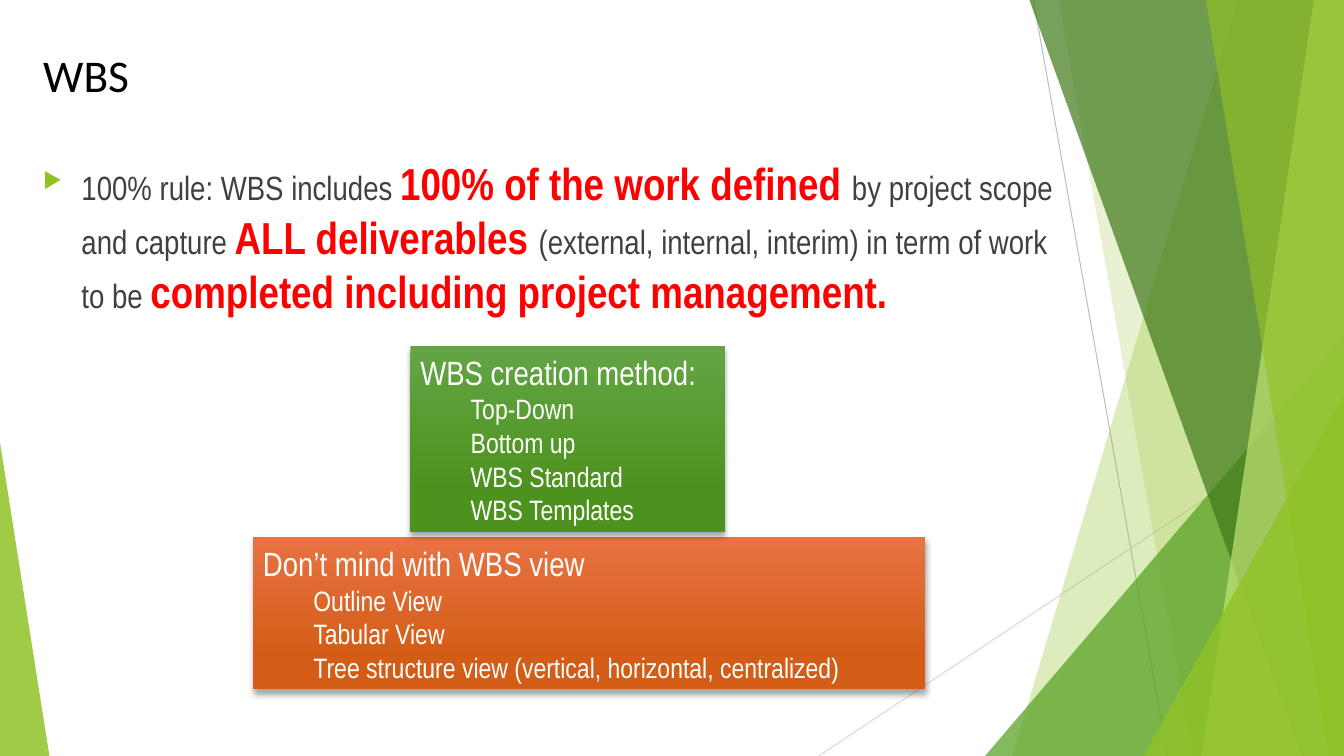
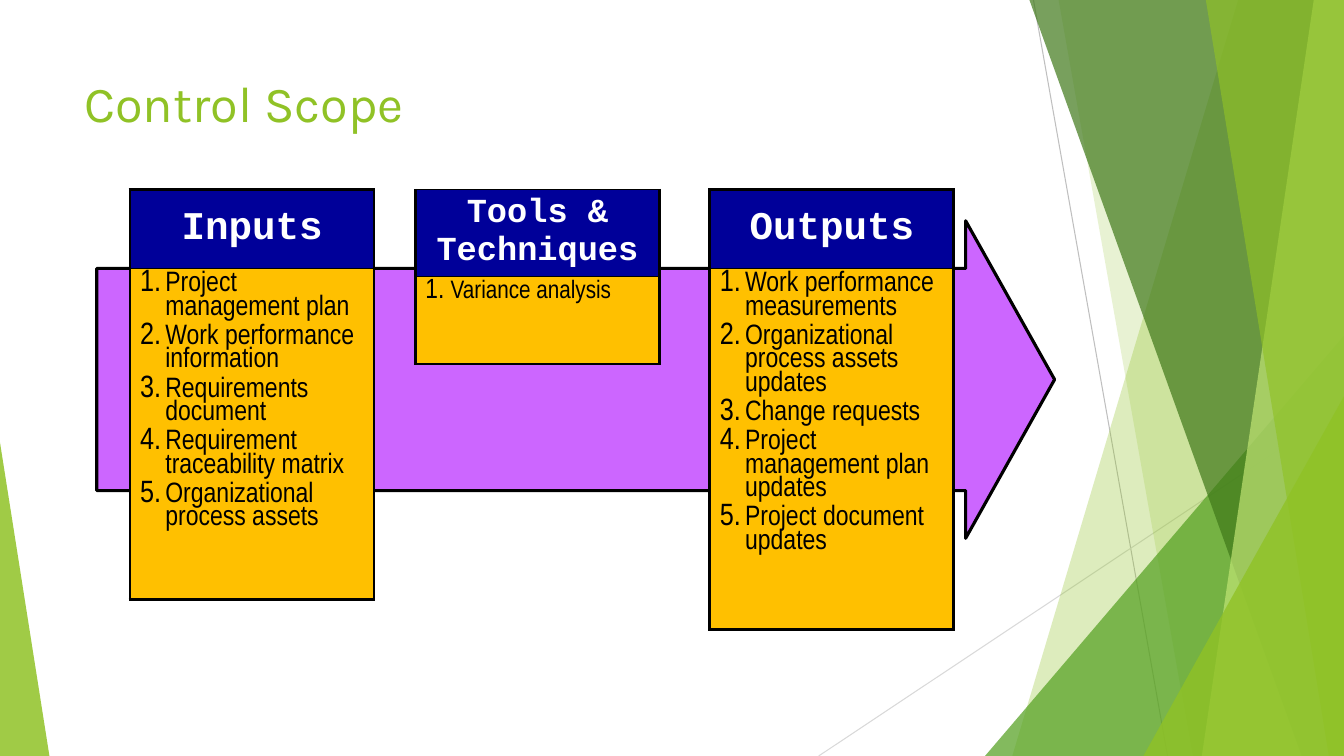
from lxml import etree
from pptx import Presentation
from pptx.dml.color import RGBColor
from pptx.enum.shapes import MSO_CONNECTOR, MSO_SHAPE
from pptx.enum.text import MSO_ANCHOR, PP_ALIGN
from pptx.oxml.ns import qn
from pptx.util import Inches, Pt

STRAIGHT = MSO_CONNECTOR.STRAIGHT
RECTANGLE = MSO_SHAPE.RECTANGLE
TRIANGLE = MSO_SHAPE.ISOSCELES_TRIANGLE
RIGHT_ARROW = MSO_SHAPE.RIGHT_ARROW
MIDDLE, TOP = MSO_ANCHOR.MIDDLE, MSO_ANCHOR.TOP
LEFT, CENTER = PP_ALIGN.LEFT, PP_ALIGN.CENTER

WIDTH, HEIGHT = 13.33, 7.5
BODY_FONT, HEADER_FONT = "Arial Narrow", "Courier New"
BLACK, WHITE, RED, GRAY = "000000", "FFFFFF", "FF0000", "404040"
LIME, GREEN, FOREST, PALE = "90C226", "54A021", "3F7819", "C0E474"
NAVY, AMBER, PURPLE = "000099", "FFC000", "CC66FF"
THICK, THIN = 2.25, 1


def color(value):
    return RGBColor.from_string(value)


def child(parent, tag, **attributes):
    element = etree.SubElement(parent, qn(tag))
    for key, value in attributes.items():
        element.set(key, str(value))
    return element


def add_text(paragraph, text, size=20, font=BODY_FONT, fill=BLACK, bold=False):
    run = paragraph.add_run()
    run.text = text
    run.font.size = Pt(size)
    run.font.name = font
    run.font.bold = bold
    run.font.color.rgb = color(fill)


def indent(paragraph, left, first=0):
    properties = paragraph._p.get_or_add_pPr()
    properties.set("marL", str(Inches(left)))
    properties.set("indent", str(Inches(first)))
    return properties


def paragraphs(frame, count):
    return [frame.paragraphs[0]] + [frame.add_paragraph() for _ in range(count - 1)]


class Deck:
    """Holds the shared style and the slide being built."""

    def __init__(self):
        self.presentation = Presentation()
        self.presentation.slide_width = Inches(WIDTH)
        self.presentation.slide_height = Inches(HEIGHT)
        self.shapes = None

    def new_slide(self):
        layout = self.presentation.slide_layouts[6]
        self.shapes = self.presentation.slides.add_slide(layout).shapes
        self.line(10.25, 0, 11.58, HEIGHT, "BFBFBF")
        self.line(WIDTH, 4.03, 8.12, HEIGHT, "D9D9D9")
        self.facet(12.28, 10.04, LIME, 30)
        self.facet(10.5, 11.83, LIME, 20)
        self.triangle(9.77, 3.33, 3.56, 1, GREEN, 72)
        self.facet(10.21, 12.91, FOREST, 70)
        self.facet(13.03, 11.92, PALE, 70)
        self.facet(11.96, 13.18, LIME, 65)
        self.triangle(11.34, 3.93, 1.99, 1, LIME, 80)
        self.triangle(0, 4.39, 0.49, 0, LIME, 85)

    def line(self, x1, y1, x2, y2, stroke):
        connector = self.shapes.add_connector(
            STRAIGHT, Inches(x1), Inches(y1), Inches(x2), Inches(y2))
        connector.line.color.rgb = color(stroke)
        connector.line.width = Pt(0.75)
        child(connector.element.spPr, "a:effectLst")

    def tint(self, shape, fill, opacity):
        shape.shadow.inherit = False
        shape.line.fill.background()
        shape.fill.solid()
        shape.fill.fore_color.rgb = color(fill)
        solid = shape.element.spPr.find(qn("a:solidFill"))
        child(solid[0], "a:alpha", val=opacity * 1000)

    def facet(self, top_x, bottom_x, fill, opacity):
        builder = self.shapes.build_freeform(Inches(top_x), 0)
        corners = [(WIDTH, 0), (WIDTH, HEIGHT), (bottom_x, HEIGHT)]
        builder.add_line_segments([(Inches(x), Inches(y)) for x, y in corners])
        self.tint(builder.convert_to_shape(), fill, opacity)

    def triangle(self, left, top, width, apex, fill, opacity):
        shape = self.shape(TRIANGLE, left, top, width, HEIGHT - top)
        shape.adjustments[0] = apex
        self.tint(shape, fill, opacity)

    def shape(self, preset, left, top, width, height):
        shape = self.shapes.add_shape(
            preset, Inches(left), Inches(top), Inches(width), Inches(height))
        shape.shadow.inherit = False
        return shape

    def text_box(self, left, top, width, height):
        box = self.shapes.add_textbox(
            Inches(left), Inches(top), Inches(width), Inches(height))
        box.text_frame.word_wrap = True
        box.text_frame.vertical_anchor = TOP
        return box.text_frame.paragraphs[0]

    def title(self, text, left, top, width, height, **style):
        add_text(self.text_box(left, top, width, height), text, **style)

    def bullet(self, spans, left, top, width, height):
        paragraph = self.text_box(left, top, width, height)
        properties = indent(paragraph, 0.38, -0.38)
        child(child(properties, "a:buClr"), "a:srgbClr", val=LIME)
        child(properties, "a:buSzPct", val=64000)
        child(properties, "a:buChar", char="▶")
        for text, key in spans:
            add_text(paragraph, text, size=32 if key else 24,
                     fill=RED if key else GRAY, bold=key)

    def card(self, heading, items, left, top, width, height, gradient):
        card = self.shape(RECTANGLE, left, top, width, height)
        card.line.fill.background()
        card.fill.gradient()
        card.fill.gradient_angle = 270
        for stop, fill, position in zip(card.fill.gradient_stops, gradient, (0, 0.78)):
            stop.color.rgb = color(fill)
            stop.position = position
        effects = card.element.spPr.find(qn("a:effectLst"))
        shadow = child(effects, "a:outerShdw", blurRad=Pt(4), dist=Pt(3),
                       dir=5400000, rotWithShape=0)
        child(child(shadow, "a:srgbClr", val=BLACK), "a:alpha", val=35000)
        frame = card.text_frame
        frame.word_wrap = True
        frame.vertical_anchor = MIDDLE
        first, *rest = paragraphs(frame, len(items) + 1)
        first.alignment = LEFT
        add_text(first, heading, size=24, fill=WHITE)
        for paragraph, item in zip(rest, items):
            indent(paragraph, 0.5)
            paragraph.level = 1
            paragraph.alignment = LEFT
            add_text(paragraph, item, fill=WHITE)

    def arrow(self, left, top, width, height, shaft, head):
        arrow = self.shape(RIGHT_ARROW, left, top, width, height)
        arrow.adjustments[0] = shaft
        arrow.adjustments[1] = head
        arrow.fill.solid()
        arrow.fill.fore_color.rgb = color(PURPLE)
        arrow.line.color.rgb = color(BLACK)
        arrow.line.width = Pt(THICK)

    def cell(self, cell, fill, top, bottom):
        properties = cell._tc.get_or_add_tcPr()
        borders = {"L": THICK, "R": THICK, "T": top, "B": bottom}
        for side, weight in borders.items():
            border = child(properties, f"a:ln{side}", w=Pt(weight))
            child(child(border, "a:solidFill"), "a:srgbClr", val=BLACK)
        cell.fill.solid()
        cell.fill.fore_color.rgb = color(fill)

    def process_table(self, heading, items, left, heights,
                      heading_size=28, item_size=20, top_border=THICK):
        table = self.shapes.add_table(
            2, 1, Inches(left), Inches(1.88), Inches(2.42), Inches(sum(heights))).table
        for row, height in zip(table.rows, heights):
            row.height = Inches(height)
        header, body = table.cell(0, 0), table.cell(1, 0)
        self.cell(header, NAVY, top_border, THIN)
        self.cell(body, AMBER, THIN, THICK)
        header.vertical_anchor = MIDDLE
        header.margin_top = header.margin_bottom = Inches(0.03)
        label = header.text_frame.paragraphs[0]
        label.alignment = CENTER
        add_text(label, heading, size=heading_size, font=HEADER_FONT,
                 fill=WHITE, bold=True)
        for index, paragraph in enumerate(paragraphs(body.text_frame, len(items))):
            properties = indent(paragraph, 0.25, -0.25)
            child(properties, "a:buSzPct", val=110000)
            child(properties, "a:buAutoNum", type="arabicPeriod")
            paragraph.line_spacing = 0.89
            if index:
                paragraph.space_before = Pt(4)
            add_text(paragraph, items[index], size=item_size)


def wbs_slide(deck):
    deck.new_slide()
    deck.title("WBS", 0.33, 0.42, 11.11, 0.5, size=32.4, font="Calibri")
    deck.bullet([
        ("100% rule: WBS includes ", False),
        ("100% of the work defined ", True),
        ("by project scope and capture ", False),
        ("ALL deliverables ", True),
        ("(external, internal, interim) in term of work to be ", False),
        ("completed including project management.", True),
    ], 0.33, 1.5, 10.43, 5.5)
    deck.card("Don’t mind with WBS view",
              ["Outline View", "Tabular View",
               "Tree structure view (vertical, horizontal, centralized)"],
              2.51, 5.33, 6.67, 1.51, ("E87242", "D35D16"))
    deck.card("WBS creation method:",
              ["Top-Down", "Bottom up", "WBS Standard", "WBS Templates"],
              4.07, 3.43, 3.12, 1.85, ("63A545", "4D921E"))


def control_scope_slide(deck):
    deck.new_slide()
    deck.title("Control Scope", 0.74, 0.67, 9.4, 1.44,
               size=36, font="Karla", fill=LIME)
    deck.arrow(0.96, 2.19, 9.5, 3.15, shaft=0.7, head=0.28)
    deck.process_table("Inputs", [
        "Project management plan",
        "Work performance information",
        "Requirements document",
        "Requirement traceability matrix",
        "Organizational process assets",
    ], 1.29, (0.78, 2.9))
    deck.process_table("Tools & Techniques", ["Variance analysis"],
                       4.12, (0.86, 0.87),
                       heading_size=24, item_size=18, top_border=THIN)
    deck.process_table("Outputs", [
        "Work performance measurements",
        "Organizational process assets updates",
        "Change requests",
        "Project management plan updates",
        "Project document updates",
    ], 7.04, (0.78, 3.46))


def main():
    deck = Deck()
    wbs_slide(deck)
    control_scope_slide(deck)
    deck.presentation.save("out.pptx")


if __name__ == "__main__":
    main()
